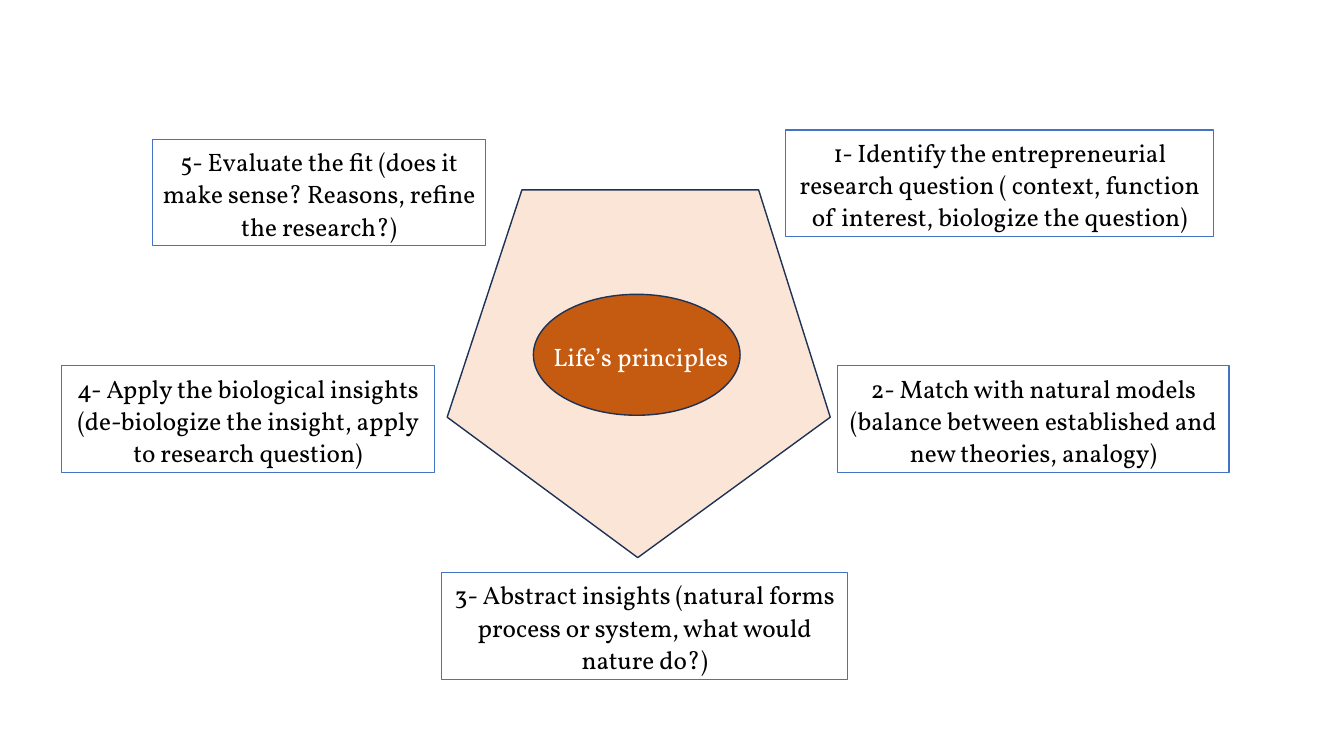
from dataclasses import dataclass

import pptx
import pptx.dml.color
import pptx.enum.shapes
import pptx.enum.text
import pptx.util

Inches = pptx.util.Inches
Pt = pptx.util.Pt
RGBColor = pptx.dml.color.RGBColor
MSO_SHAPE = pptx.enum.shapes.MSO_SHAPE
PP_ALIGN = pptx.enum.text.PP_ALIGN

PEACH = RGBColor(0xFB, 0xE5, 0xD6)
RUST = RGBColor(0xC5, 0x5A, 0x11)
NAVY = RGBColor(0x1E, 0x32, 0x56)
BLUE = RGBColor(0x44, 0x72, 0xC4)
BLACK = RGBColor(0, 0, 0)
WHITE = RGBColor(0xFF, 0xFF, 0xFF)


@dataclass
class Figure:
    kind: MSO_SHAPE
    left: float
    top: float
    width: float
    height: float
    fill: RGBColor
    rotation: float = 0


@dataclass
class Label:
    text: str
    left: float
    top: float
    width: float
    height: float = 1.06
    color: RGBColor = BLACK
    align: PP_ALIGN = PP_ALIGN.CENTER
    outlined: bool = True


FIGURES = [
    Figure(MSO_SHAPE.REGULAR_PENTAGON, 4.6, 1.77, 3.84, 3.61, PEACH, 108.2),
    Figure(MSO_SHAPE.OVAL, 5.29, 2.92, 2.05, 1.2, RUST),
]

LABELS = [
    Label("1- Identify the entrepreneurial research question ( context, function "
          "of interest, biologize the question)", 7.79, 1.29, 4.25),
    Label("2- Match with natural models (balance between established and new "
          "theories, analogy)", 8.31, 3.63, 3.88),
    Label("3- Abstract insights (natural forms process or system, what would "
          "nature do?)", 4.38, 5.68, 4.03),
    Label("4- Apply the biological insights (de-biologize the insight, apply to "
          "research question)", 0.61, 3.63, 3.7),
    Label("5- Evaluate the fit (does it make sense? Reasons, refine the "
          "research?)", 1.51, 1.38, 3.31),
    Label("Life’s principles", 5.39, 3.32, 4.52, 0.41, WHITE, PP_ALIGN.LEFT, False),
]


def add_figure(s: pptx.slide.Slide, fig: Figure) -> None:
    sp = s.shapes.add_shape(fig.kind, Inches(fig.left), Inches(fig.top),
                            Inches(fig.width), Inches(fig.height))
    sp.rotation = fig.rotation
    sp.shadow.inherit = False
    sp.fill.solid()
    sp.fill.fore_color.rgb = fig.fill
    sp.line.color.rgb = NAVY
    sp.line.width = Pt(1)


def add_label(s: pptx.slide.Slide, label: Label) -> None:
    sp = s.shapes.add_textbox(Inches(label.left), Inches(label.top),
                              Inches(label.width), Inches(label.height))
    if label.outlined:
        sp.line.color.rgb = BLUE
        sp.line.width = Pt(0.75)
    tf = sp.text_frame
    tf.word_wrap = True
    tf.auto_size = pptx.enum.text.MSO_AUTO_SIZE.SHAPE_TO_FIT_TEXT
    p = tf.paragraphs[0]
    p.alignment = label.align
    p.line_spacing = 1.07
    p.space_after = Pt(8)
    r = p.add_run()
    r.text = label.text
    r.font.name = "Vollkorn"
    r.font.size = Pt(18)
    r.font.color.rgb = label.color


def main() -> None:
    prs = pptx.Presentation()
    prs.slide_width = Inches(13.33)
    prs.slide_height = Inches(7.5)
    s = prs.slides.add_slide(prs.slide_layouts[6])
    for fig in FIGURES:
        add_figure(s, fig)
    for label in LABELS:
        add_label(s, label)
    prs.save("out.pptx")


if __name__ == "__main__":
    main()
